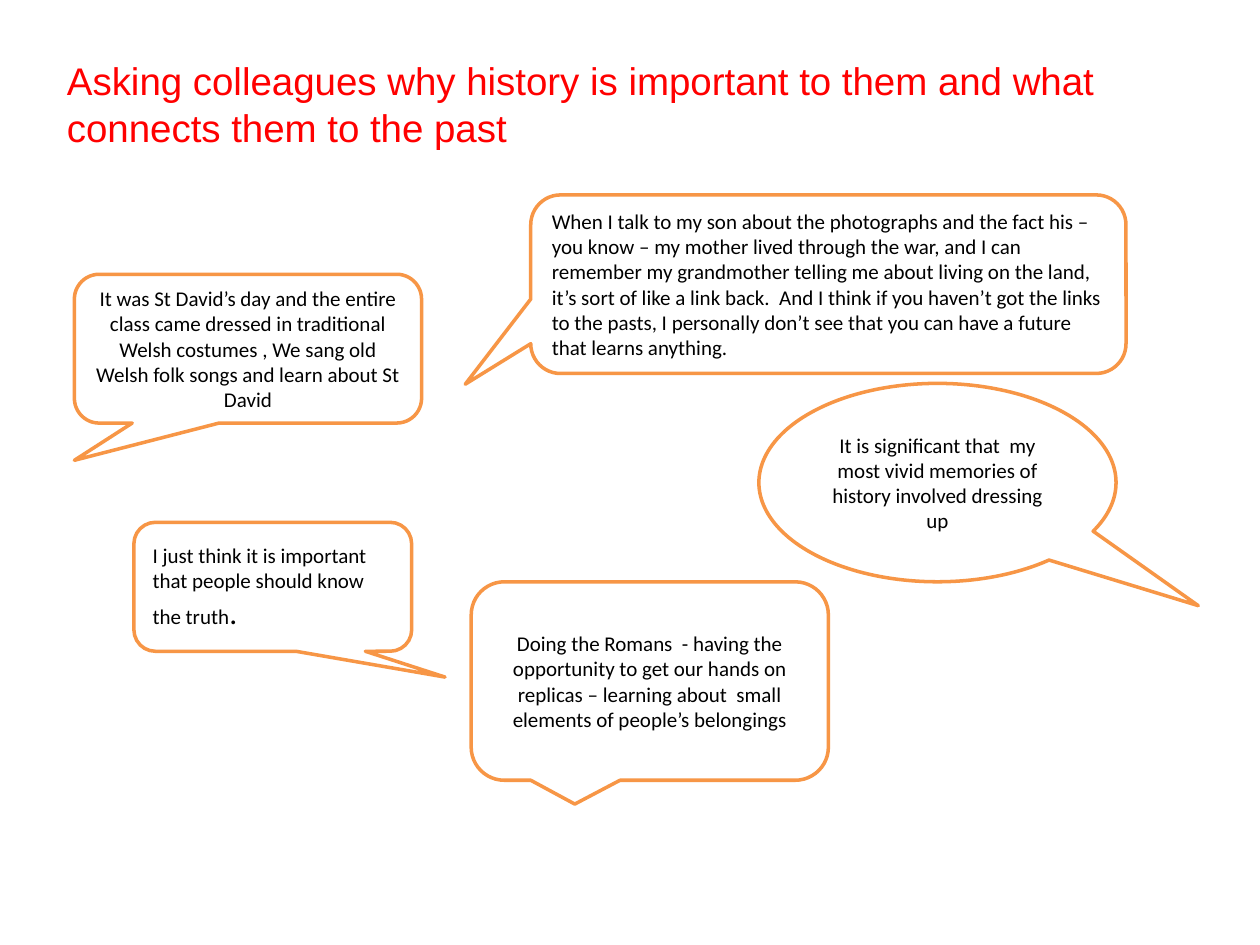
from dataclasses import dataclass

from pptx import Presentation
from pptx.dml.color import RGBColor
from pptx.enum.shapes import MSO_SHAPE
from pptx.enum.text import MSO_ANCHOR as Anchor, PP_ALIGN as Align
from pptx.util import Cm, Pt


@dataclass(frozen=True)
class Theme:
    title_color: RGBColor = RGBColor(0xFF, 0x00, 0x00)
    text_color: RGBColor = RGBColor(0x00, 0x00, 0x00)
    bubble_fill: RGBColor = RGBColor(0xFF, 0xFF, 0xFF)
    bubble_line: RGBColor = RGBColor(0xF7, 0x96, 0x46)
    title_font: str = "Arial"
    quote_font: str = "Calibri"
    title_size: Pt = Pt(22)
    quote_size: Pt = Pt(12)
    full_stop_size: Pt = Pt(18)
    line_width: Pt = Pt(2)


class QuoteSlide:
    def __init__(self, presentation, theme):
        self.theme = theme
        self.slide = presentation.slides.add_slide(presentation.slide_layouts[6])

    def set_text(self, shape, text, font_name, size, color, align):
        frame = shape.text_frame
        frame.word_wrap = True
        frame.vertical_anchor = Anchor.MIDDLE
        paragraph = frame.paragraphs[0]
        paragraph.alignment = align
        paragraph.add_run().text = text
        paragraph.font.name = font_name
        paragraph.font.size = size
        paragraph.font.color.rgb = color
        return paragraph

    def title(self, text, box):
        theme = self.theme
        shape = self.slide.shapes.add_textbox(*map(Cm, box))
        self.set_text(shape, text, theme.title_font, theme.title_size,
                      theme.title_color, Align.LEFT)

    def bubble(self, text, box, tail, align=Align.CENTER,
               kind=MSO_SHAPE.ROUNDED_RECTANGULAR_CALLOUT):
        """Add a speech bubble; tail is the tip's offset from the centre, as shares of the size."""
        theme = self.theme
        shape = self.slide.shapes.add_shape(kind, *map(Cm, box))
        shape.shadow.inherit = False
        shape.adjustments[0], shape.adjustments[1] = tail
        shape.fill.solid()
        shape.fill.fore_color.rgb = theme.bubble_fill
        shape.line.color.rgb = theme.bubble_line
        shape.line.width = theme.line_width
        return self.set_text(shape, text, theme.quote_font, theme.quote_size,
                             theme.text_color, align)


def main():
    presentation = Presentation()
    presentation.slide_width, presentation.slide_height = Cm(25.4), Cm(19.05)
    theme = Theme()
    page = QuoteSlide(presentation, theme)

    page.title("Asking colleagues why history is important to them and what "
               "connects them to the past", (1.1, 0.7, 22.83, 2.78))
    page.bubble("It was St David’s day and the entire class came dressed in "
                "traditional Welsh costumes , We sang old Welsh folk songs and "
                "learn about St David", (1.5, 5.53, 7, 3), (-0.5, 0.75))
    page.bubble("When I talk to my son about the photographs and the fact his – "
                "you know – my mother lived through the war, and I can remember "
                "my grandmother telling me about living on the land, it’s sort "
                "of like a link back.  And I think if you haven’t got the links "
                "to the pasts, I personally don’t see that you can have a future "
                "that learns anything.",
                (10.7, 3.93, 12, 3.6), (-0.61, 0.56), Align.LEFT)
    truth = page.bubble("I just think it is important that people should know "
                        "the truth", (2.7, 10.53, 5.6, 2.6), (0.62, 0.7), Align.LEFT)
    full_stop = truth.add_run()
    full_stop.text = "."
    full_stop.font.size = theme.full_stop_size
    page.bubble("Doing the Romans  - having the opportunity to get our hands on "
                "replicas – learning about  small elements of people’s belongings",
                (9.5, 11.73, 7.2, 4), (-0.21, 0.62))
    page.bubble("It is significant that  my most vivid memories of history "
                "involved dressing up", (15.3, 7.73, 7.2, 4), (0.73, 0.62),
                kind=MSO_SHAPE.OVAL_CALLOUT)

    presentation.save("out.pptx")


if __name__ == "__main__":
    main()
